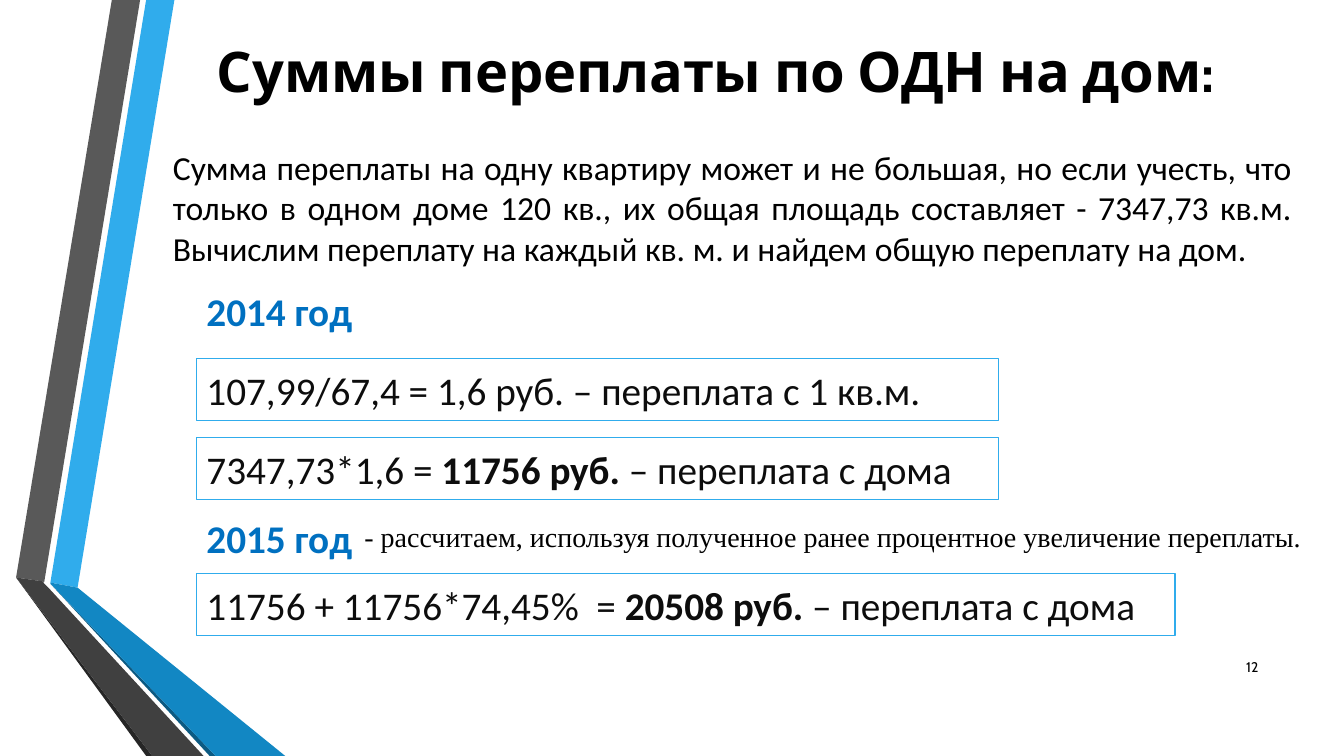
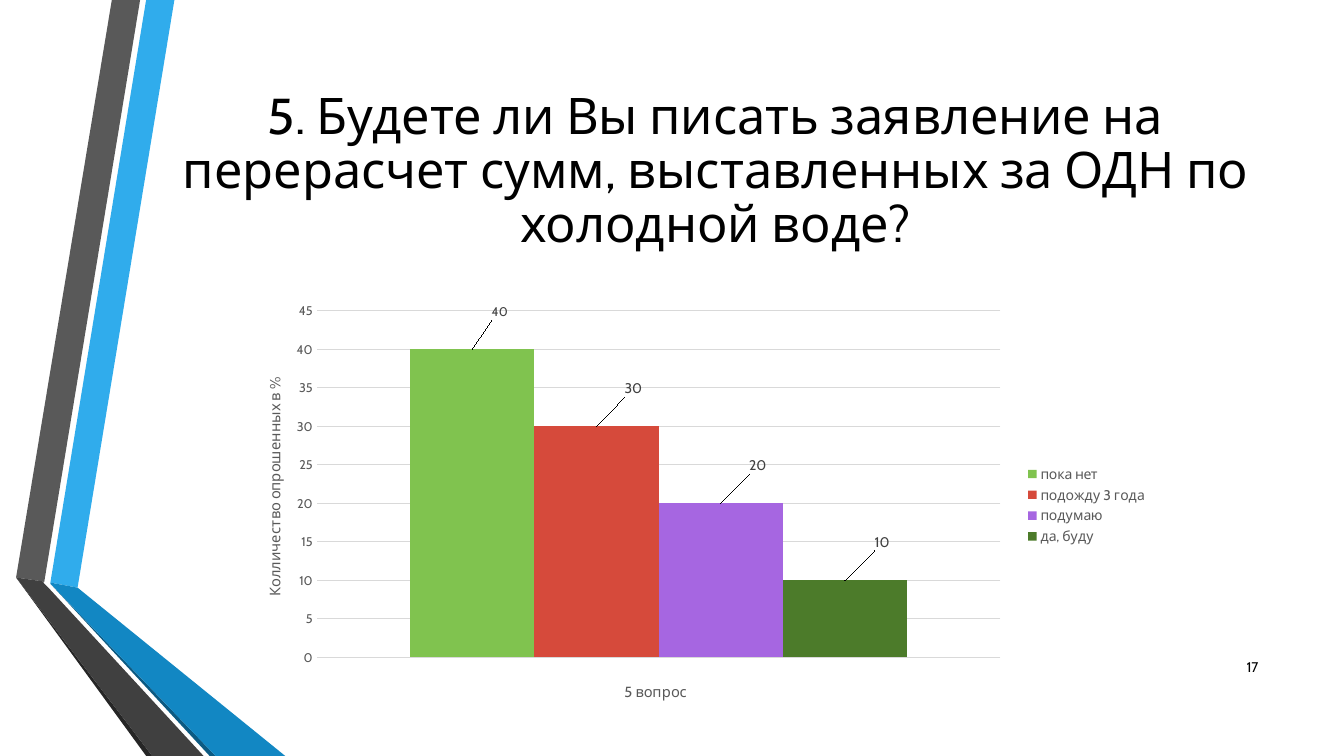
from lxml import etree
from pptx import Presentation
from pptx.chart.data import CategoryChartData
from pptx.dml.color import RGBColor
from pptx.enum.chart import XL_CHART_TYPE, XL_LABEL_POSITION, XL_LEGEND_POSITION, XL_TICK_LABEL_POSITION, XL_TICK_MARK
from pptx.enum.shapes import MSO_SHAPE
from pptx.enum.text import MSO_ANCHOR, PP_ALIGN
from pptx.oxml.ns import qn
from pptx.util import Inches, Pt

RECT = MSO_SHAPE.RECTANGLE
MIDDLE = MSO_ANCHOR.MIDDLE
LEFT, CENTER, RIGHT, FULL = PP_ALIGN.LEFT, PP_ALIGN.CENTER, PP_ALIGN.RIGHT, PP_ALIGN.JUSTIFY
COLUMN = XL_CHART_TYPE.COLUMN_CLUSTERED
LABEL_END = XL_LABEL_POSITION.OUTSIDE_END
LEGEND_SIDE = XL_LEGEND_POSITION.RIGHT
NO_TEXT = XL_TICK_LABEL_POSITION.NONE
NO_TICK = XL_TICK_MARK.NONE

WIDE, HIGH = Inches(13.33), Inches(7.5)
COLS, ROWS = 160, 90
HEAD, BODY, NOTE = "Cabin", "Calibri", "Times New Roman"

COLORS = {
    "black": "000000", "ink": "0D0D0D", "blue": "0070C0",
    "sky": "30ACEC", "sea": "1287C3", "deep": "0C5A82",
    "gray": "595959", "dark": "404040", "coal": "262626", "grid": "D9D9D9",
    "green": "80C34F", "red": "D64A3B", "violet": "A666E1", "moss": "4C7B2A",
}

BANDS = [
    ("sky", [(50, 578), (77, 583), (173, 0), (145, 0)]),
    ("gray", [(139, 0), (111, 0), (16, 573), (44, 577)]),
    ("coal", [(16, 573), (145, 750), (151, 750)]),
    ("deep", [(50, 579), (208, 750), (214, 750)]),
    ("sea", [(50, 579), (214, 750), (283, 750), (77, 583), (50, 578)]),
    ("dark", [(202, 750), (48, 583), (43, 578), (44, 577), (16, 573), (151, 750)]),
]

SUMS = [
    (42.7, 95.5, "107,99/67,4 = 1,6 руб. – переплата с 1 кв.м."),
    (52.1, 95.5, "7347,73*1,6 = |11756 руб. |– переплата с дома"),
    (68.3, 116.5, "11756 + 11756*74,45%  = |20508 руб. |– переплата с дома"),
]

VOTES = [
    ("пока нет", 40, "green", 9, 0.03),
    ("подожду 3 года", 30, "red", 10, 0.04),
    ("подумаю", 20, "violet", 10, 0.04),
    ("да, буду", 10, "moss", 10, 0.04),
]


def tint(name):
    return RGBColor.from_string(COLORS[name])


def cells(col, row, wide, high):
    return [int(WIDE * col / COLS), int(HIGH * row / ROWS),
            int(WIDE * wide / COLS), int(HIGH * high / ROWS)]


def style(font, size, color, face=HEAD, bold=False):
    font.name, font.size, font.bold = face, Pt(size), bold
    font.color.rgb = tint(color)


def write(shape, text, size=28, color="black", face=BODY, bold=False, align=LEFT, gap=1.0):
    frame = shape.text_frame
    frame.word_wrap = True
    frame.vertical_anchor = MIDDLE
    para = frame.paragraphs[0]
    para.alignment = align
    para.line_spacing = gap
    for index, part in enumerate(text.split("|")):
        run = para.add_run()
        run.text = part
        style(run.font, size, color, face, bold or index % 2 == 1)


def label(slide, area, text, **form):
    write(slide.shapes.add_textbox(*cells(*area)), text, **form)


def box(slide, row, wide, text):
    shape = slide.shapes.add_shape(RECT, *cells(23.4, row, wide, 7.4))
    shape.shadow.inherit = False
    shape.fill.background()
    shape.line.color.rgb = tint("sky")
    shape.line.width = Pt(1)
    write(shape, text, color="ink")


def band(slide, color, spots):
    path = slide.shapes.build_freeform(*spots[0], scale=Inches(0.01))
    path.add_line_segments(spots[1:], close=True)
    shape = path.convert_to_shape()
    shape.shadow.inherit = False
    shape.fill.solid()
    shape.fill.fore_color.rgb = tint(color)
    shape.line.fill.background()


def page(deck, number, title, row, size, bold=False):
    slide = deck.slides.add_slide(deck.slide_layouts[6])
    for color, spots in BANDS:
        band(slide, color, spots)
    label(slide, (19.4, row, 131.6, 23), title, size=size, face=HEAD,
          bold=bold, align=CENTER, gap=0.9)
    label(slide, (143.8, 77, 7.2, 4.8), number, size=10, face=HEAD, align=RIGHT)
    return slide


def place(node, index, **marks):
    layout = node.find(qn("c:layout"))
    if layout is None:
        layout = etree.Element(qn("c:layout"))
        node.insert(index, layout)
    manual = etree.SubElement(layout, qn("c:manualLayout"))
    for key, value in marks.items():
        etree.SubElement(manual, qn("c:" + key)).set("val", str(value))


def name_axis(axis, text, x, y):
    title = axis.axis_title
    title.text_frame.text = text
    style(title.text_frame.paragraphs[0].runs[0].font, 10.5, "gray")
    place(title._element, 1, xMode="edge", yMode="edge", x=x, y=y)


def paint(series, color, size, shift):
    series.format.fill.solid()
    series.format.fill.fore_color.rgb = tint(color)
    tag = series.points[0].data_label
    style(tag.font, size, "dark")
    tag.position = LABEL_END
    place(series._element.find(".//" + qn("c:dLbl")), 1, x=shift, y=-0.06)


def graph(slide, area):
    data = CategoryChartData()
    data.categories = ["1"]
    for name, value, *_ in VOTES:
        data.add_series(name, [value])
    chart = slide.shapes.add_chart(COLUMN, *cells(*area), data).chart
    style(chart.font, 10, "black")
    chart.has_title = False
    chart.has_legend = True
    chart.legend.position = LEGEND_SIDE
    chart.legend.include_in_layout = False
    style(chart.legend.font, 10, "gray")

    plot = chart.plots[0]
    plot.vary_by_categories = False
    plot.gap_width, plot.overlap = 150, 0
    for series, (_, _, color, size, shift) in zip(plot.series, VOTES):
        paint(series, color, size, shift)
    place(chart._chartSpace.find(".//" + qn("c:plotArea")), 0, layoutTarget="inner",
          xMode="edge", yMode="edge", x=0.09, y=0.04, w=0.74, h=0.82)

    base, scale = chart.category_axis, chart.value_axis
    for axis in (base, scale):
        axis.major_tick_mark = axis.minor_tick_mark = NO_TICK
        axis.format.line.fill.background()
    base.tick_label_position = NO_TEXT
    scale.minimum_scale, scale.maximum_scale, scale.major_unit = 0, 45, 5
    style(scale.tick_labels.font, 9, "gray")
    grid = scale.major_gridlines.format.line
    grid.color.rgb = tint("grid")
    grid.width = Pt(0.75)
    name_axis(base, "5 вопрос", 0.42, 0.91)
    name_axis(scale, "Колличество опрошенных в %", 0.03, 0.19)


def main():
    deck = Presentation()
    deck.slide_width, deck.slide_height = WIDE, HIGH

    slide = page(deck, "12", "Суммы переплаты по ОДН на дом:", -2.6, 40, True)
    label(slide, (19.4, 16.8, 135.6, 15.8),
          "Сумма переплаты на одну квартиру может и не большая, но если учесть, "
          "что только в одном доме 120 кв., их общая площадь составляет - 7347,73 кв.м. "
          "Вычислим переплату на каждый кв. м. и найдем общую переплату на дом.",
          size=24, align=FULL)
    for row, text in ((33.6, "2014 год"), (60.6, "2015 год")):
        label(slide, (23.4, row, 26.4, 6.8), text, color="blue", bold=True)
    for row, wide, text in SUMS:
        box(slide, row, wide, text)
    label(slide, (42.2, 61.2, 115.2, 5.3),
          "- рассчитаем, используя полученное ранее процентное увеличение переплаты.",
          size=20, face=NOTE, align=FULL)

    slide = page(deck, "17", "5. Будете ли Вы писать заявление на перерасчет сумм, "
                 "выставленных за ОДН по холодной воде?", 9, 36)
    graph(slide, (27.8, 35, 110, 50.3))
    deck.save("out.pptx")


if __name__ == "__main__":
    main()
